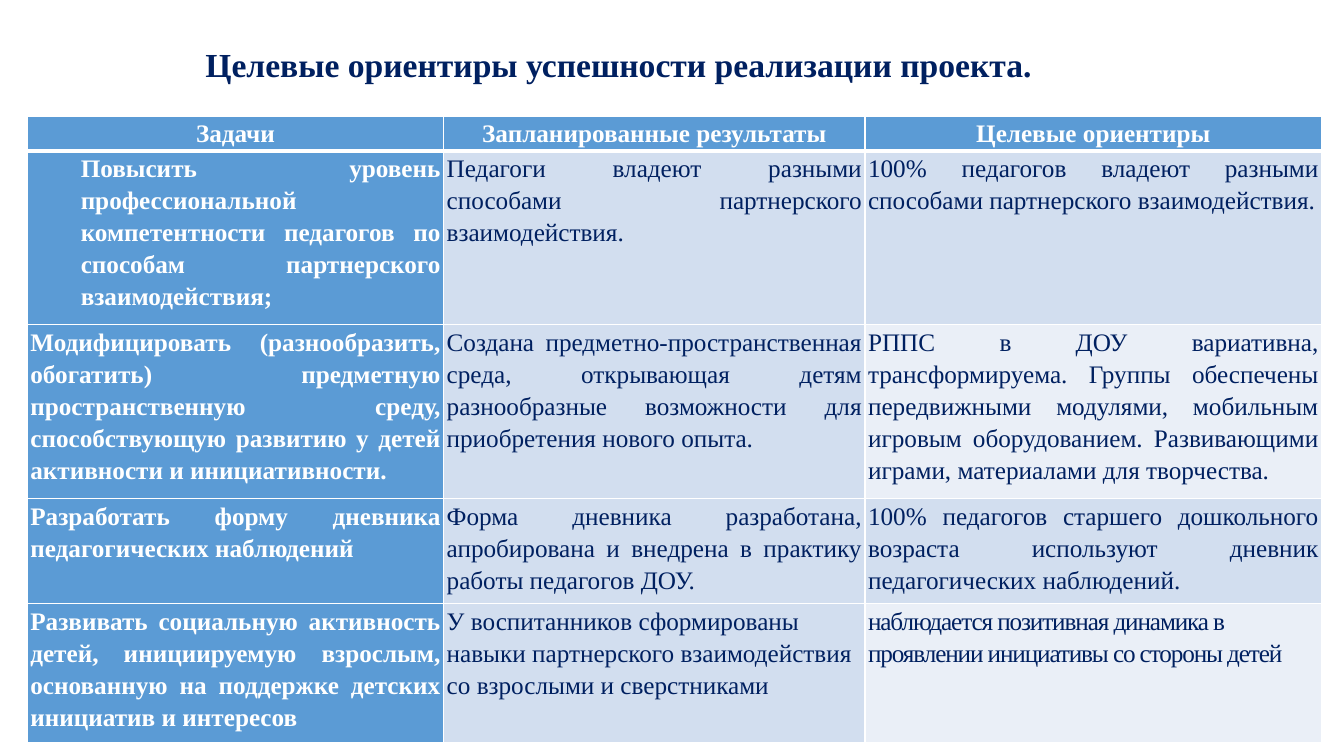
from lxml import etree
from pptx import Presentation
from pptx.dml.color import RGBColor
from pptx.enum.text import MSO_AUTO_SIZE, PP_ALIGN
from pptx.oxml.ns import qn
from pptx.util import Pt

LEFT, MID, JUST = PP_ALIGN.LEFT, PP_ALIGN.CENTER, PP_ALIGN.JUSTIFY
GROW = MSO_AUTO_SIZE.SHAPE_TO_FIT_TEXT

COLORS = {
    "white": "FFFFFF",
    "navy": "002060",
    "blue": "5B9BD5",
    "mist": "D2DEEF",
    "pale": "EAEFF7",
}

WIDTHS = [297.4, 301, 326.2]
HEIGHTS = [24.3, 123.6, 124.3, 75, 98.6]
ROWS = [
    ["Задачи", "Запланированные результаты", "Целевые ориентиры"],
    ["Повысить уровень профессиональной компетентности педагогов по способам "
     "партнерского взаимодействия;",
     "Педагоги владеют разными способами партнерского взаимодействия.",
     "100% педагогов владеют разными способами партнерского взаимодействия."],
    ["Модифицировать (разнообразить, обогатить) предметную пространственную среду, "
     "способствующую развитию у детей активности и инициативности.",
     "Создана предметно-пространственная среда, открывающая детям разнообразные "
     "возможности для приобретения нового опыта.",
     "РППС в ДОУ вариативна, трансформируема. Группы обеспечены передвижными "
     "модулями, мобильным игровым оборудованием. Развивающими играми, материалами "
     "для творчества."],
    ["Разработать форму дневника педагогических наблюдений",
     "Форма дневника разработана, апробирована и внедрена в практику работы "
     "педагогов ДОУ.",
     "100% педагогов старшего дошкольного возраста используют дневник "
     "педагогических наблюдений."],
    ["Развивать социальную активность детей, инициируемую взрослым, основанную на "
     "поддержке детских инициатив и интересов",
     "У воспитанников сформированы навыки партнерского взаимодействия со взрослыми "
     "и сверстниками",
     "наблюдается позитивная динамика в проявлении инициативы со стороны детей"],
]


class Page:
    font = "Times New Roman"
    space = 1.15

    def __init__(self, slide):
        self.slide = slide

    def text(self, para, words, size, color, bold, align):
        para.alignment = align
        para.line_spacing = self.space
        run = para.add_run()
        run.text = words
        run.font.name = self.font
        run.font.size = Pt(size)
        run.font.bold = bold
        run.font.color.rgb = RGBColor.from_string(COLORS[color])
        return run

    def title(self, words, x, y, w, h):
        box = self.slide.shapes.add_textbox(Pt(x), Pt(y), Pt(w), Pt(h))
        frame = box.text_frame
        frame.word_wrap = False
        frame.auto_size = GROW
        self.text(frame.paragraphs[0], words, 24, "navy", True, JUST)

    def edge(self, cell, side, width):
        props = cell._tc.get_or_add_tcPr()
        line = etree.SubElement(props, qn("a:ln" + side), w=str(Pt(width)))
        fill = etree.SubElement(line, qn("a:solidFill"))
        etree.SubElement(fill, qn("a:srgbClr"), val=COLORS["white"])

    def cell(self, cell, words, row, col):
        cell.margin_left = cell.margin_right = Pt(2.2)
        cell.margin_top = cell.margin_bottom = 0
        thick = {"T": row == 1, "B": row == 0}
        for side in "LRTB":
            self.edge(cell, side, 3 if thick.get(side) else 1)
        head = row == 0 or col == 0
        if head:
            back = "blue"
        elif col == 2 and row % 2 == 0:
            back = "pale"
        else:
            back = "mist"
        cell.fill.solid()
        cell.fill.fore_color.rgb = RGBColor.from_string(COLORS[back])
        if row == 0:
            align = MID
        elif row == len(ROWS) - 1 and not head:
            align = LEFT
        else:
            align = JUST
        color = "white" if head else "navy"
        return self.text(cell.text_frame.paragraphs[0], words, 18, color, head, align)

    def table(self, x, y):
        shape = self.slide.shapes.add_table(
            len(ROWS), len(WIDTHS), Pt(x), Pt(y), Pt(sum(WIDTHS)), Pt(sum(HEIGHTS)))
        grid = shape.table
        for col, width in zip(grid.columns, WIDTHS):
            col.width = Pt(width)
        for row, height in zip(grid.rows, HEIGHTS):
            row.height = Pt(height)
        for r, line in enumerate(ROWS):
            for c, words in enumerate(line):
                run = self.cell(grid.cell(r, c), words, r, c)
        # The last cell is set tighter
        run._r.get_or_add_rPr().set("spc", "-80")
        # The first task is indented
        para = grid.cell(1, 0).text_frame.paragraphs[0]
        para.space_after = Pt(10)
        props = para._p.get_or_add_pPr()
        props.set("marL", str(Pt(36)))
        props.set("indent", "0")


def main():
    deck = Presentation()
    deck.slide_width, deck.slide_height = Pt(960), Pt(540)
    page = Page(deck.slides.add_slide(deck.slide_layouts[6]))
    page.title("Целевые ориентиры успешности реализации проекта.", 139.7, 23.8, 611.3, 38.9)
    page.table(19.5, 83)
    deck.save("out.pptx")


if __name__ == "__main__":
    main()
